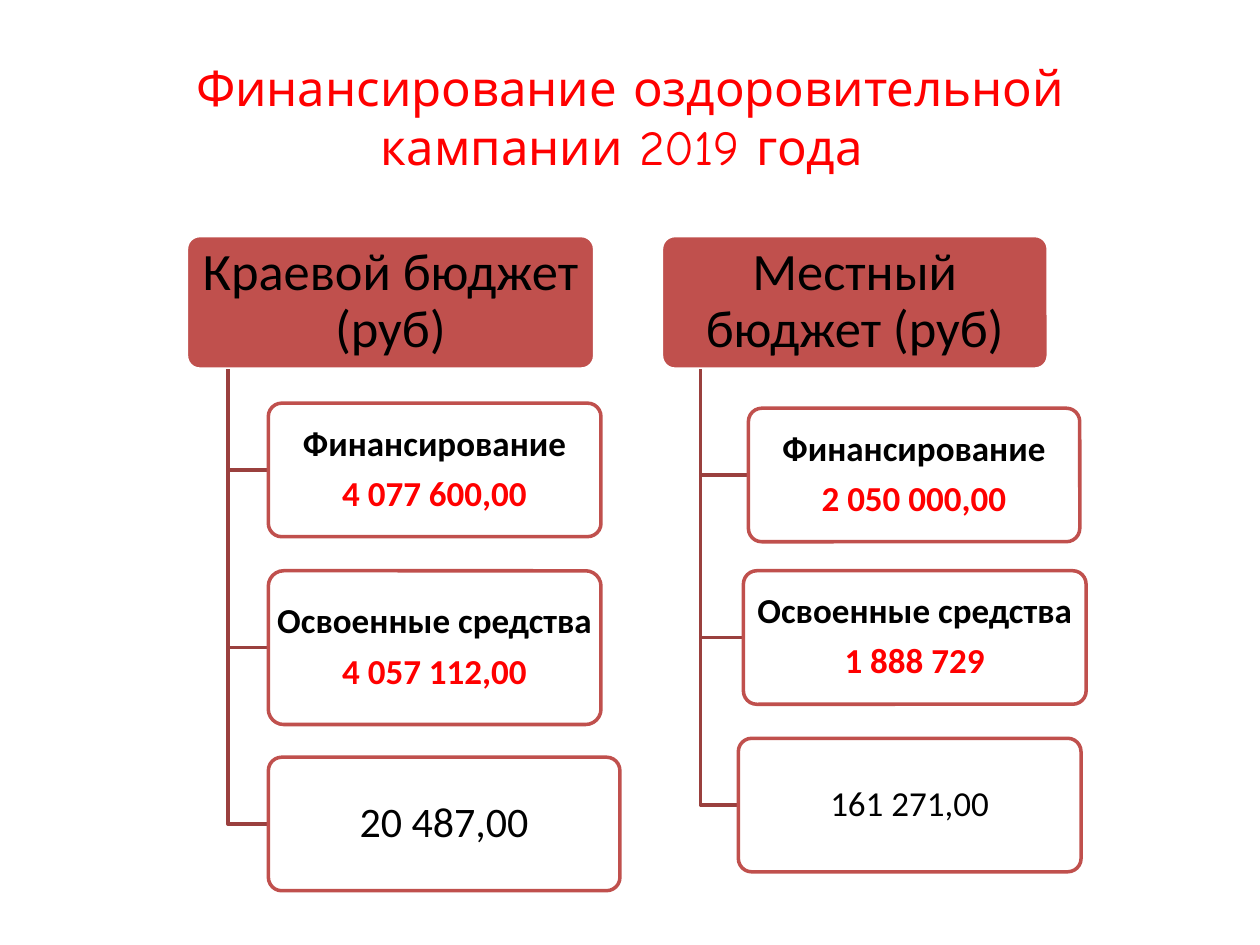
"""Build the slide on the financing of the 2019 summer health campaign."""
from pptx import Presentation
from pptx.dml.color import RGBColor
from pptx.enum.shapes import MSO_SHAPE
from pptx.enum.text import MSO_ANCHOR, PP_ALIGN
from pptx.util import Inches, Pt

COLS, ROWS = 100, 75
COLORS = {"black": "000000", "red": "FF0000", "white": "FFFFFF",
          "brick": "C0504D", "branch": "9A403E"}
HEAD_TOP, ROW_H = 18.7, 10.6
HEAD = {"size": Pt(30), "name": "Calibri"}
LABEL = {"size": Pt(20), "name": "Calibri", "bold": True}
TITLE = {"size": Pt(28), "name": "Comic Neue"}
BUDGETS = [
    {"head": "Краевой бюджет (руб)", "left": 14.8, "width": 32.4, "trunk": 18.1,
     "items": [(21.3, 32, 26.4, ROW_H, "Финансирование", "4 077 600,00"),
               (21.3, 45.3, 26.4, 12.2, "Освоенные средства", "4 057 112,00")],
     "rest": (21.3, 60.1, 27.9, ROW_H, "20 487,00", 24)},
    {"head": "Местный бюджет (руб)", "left": 52.5, "width": 30.7, "trunk": 55.6,
     "items": [(59.4, 32.4, 26.3, ROW_H, "Финансирование", "2 050 000,00"),
               (59, 45.3, 27.2, ROW_H, "Освоенные средства", "1 888 729")],
     "rest": (58.6, 58.6, 27.2, ROW_H, "161 271,00", 20)},
]


def grid(*cells):
    """Turn grid cells, each a tenth of an inch, into lengths."""
    return [Inches(c / 10) for c in cells]


def rgb(name):
    """Look up a colour by name."""
    return RGBColor.from_string(COLORS[name])


def write(tf, lines, inset, spacing):
    """Fill a text frame with centred lines of (text, colour, font format)."""
    frame = {"word_wrap": True, "vertical_anchor": MSO_ANCHOR.MIDDLE,
             "margin_left": inset, "margin_right": inset,
             "margin_top": 0, "margin_bottom": 0}
    for key, value in frame.items():
        setattr(tf, key, value)
    for i, (text, color, font) in enumerate(lines):
        p = tf.add_paragraph() if i else tf.paragraphs[0]
        p.alignment = PP_ALIGN.CENTER
        p.line_spacing = spacing
        if spacing < 1:
            p.space_after = Pt(font["size"].pt * 0.35)
        r = p.add_run()
        r.text = text
        r.font.color.rgb = rgb(color)
        for key, value in font.items():
            setattr(r.font, key, value)


def add_title(s, text):
    """Add the red heading of the slide."""
    sp = s.shapes.add_textbox(*grid(5, 3, 90, 12.5))
    write(sp.text_frame, [(text, "red", TITLE)], Inches(0.1), 1)


def add_box(s, cells, fill, line, lines, inset=0.01):
    """Add a rounded box with its text."""
    sp = s.shapes.add_shape(MSO_SHAPE.ROUNDED_RECTANGLE, *grid(*cells))
    sp.shadow.inherit = False
    sp.adjustments[0] = 0.1
    sp.fill.solid()
    sp.fill.fore_color.rgb = rgb(fill)
    sp.line.color.rgb = rgb(line)
    sp.line.width = Pt(2)
    write(sp.text_frame, lines, Inches(inset), 0.9)


def add_branch(s, trunk, cells):
    """Draw the elbow from the heading box to the left side of an item."""
    left, top, _, height = cells
    x, y0, x1, y1 = grid(trunk, HEAD_TOP + ROW_H, left, top + height / 2)
    builder = s.shapes.build_freeform(x, y0)
    builder.add_line_segments([(x, y1), (x1, y1)], close=False)
    sp = builder.convert_to_shape()
    sp.shadow.inherit = False
    sp.fill.background()
    sp.line.color.rgb = rgb("branch")
    sp.line.width = Pt(2)


def add_budget(s, budget):
    """Add one budget: heading, two sums and the remainder."""
    head = (budget["left"], HEAD_TOP, budget["width"], ROW_H)
    add_box(s, head, "brick", "white", [(budget["head"], "black", HEAD)], 0.03)
    boxes = [(cells, [(label, "black", LABEL), (total, "red", LABEL)])
             for *cells, label, total in budget["items"]]
    *cells, text, size = budget["rest"]
    boxes.append((cells, [(text, "black", {"size": Pt(size), "name": "Calibri"})]))
    for cells, lines in boxes:
        add_branch(s, budget["trunk"], cells)
        add_box(s, cells, "white", "brick", lines)


def main():
    """Build and save the slide."""
    prs = Presentation()
    prs.slide_width, prs.slide_height = grid(COLS, ROWS)
    s = prs.slides.add_slide(prs.slide_layouts[6])
    add_title(s, "Финансирование оздоровительной кампании 2019 года ")
    for budget in BUDGETS:
        add_budget(s, budget)
    prs.save("out.pptx")


if __name__ == "__main__":
    main()
